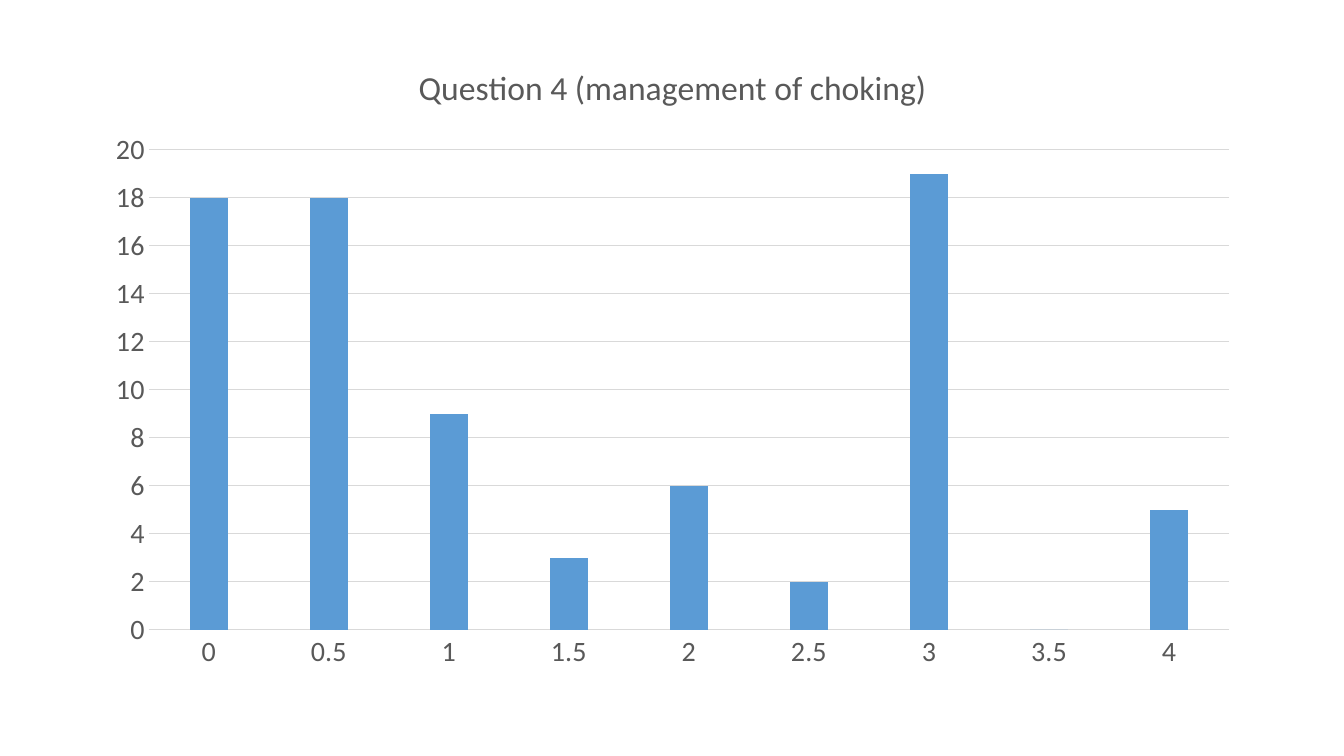
from pptx import Presentation
from pptx.chart.data import CategoryChartData
from pptx.dml.color import RGBColor
from pptx.enum.chart import XL_CHART_TYPE, XL_TICK_MARK
from pptx.util import Inches, Pt

# Content
TITLE = "Question 4 (management of choking)"
SCORES = {
    "0": 18, "0.5": 18, "1": 9, "1.5": 3, "2": 6,
    "2.5": 2, "3": 19, "3.5": 0, "4": 5,
}
COLORS = {"bar": "5B9BD5", "text": "595959", "line": "D9D9D9"}
FONT = "Calibri"
BOX = (0.92, 0.4, 11.5, 6.36)


def color(name):
    return RGBColor.from_string(COLORS[name])


def set_font(font, size):
    font.name = FONT
    font.size = Pt(size)
    font.bold = False
    font.color.rgb = color("text")


def set_line(line):
    line.color.rgb = color("line")
    line.width = Pt(0.75)


def main():
    prs = Presentation()
    prs.slide_width, prs.slide_height = Inches(13.33), Inches(7.5)
    slide = prs.slides.add_slide(prs.slide_layouts[6])

    # Chart data
    data = CategoryChartData()
    data.categories = list(SCORES)
    data.add_series(TITLE, list(SCORES.values()))
    frame = slide.shapes.add_chart(
        XL_CHART_TYPE.COLUMN_CLUSTERED, *map(Inches, BOX), data)
    chart = frame.chart
    chart.has_legend = False
    set_font(chart.font, 20)

    # Chart title
    chart.has_title = True
    run = chart.chart_title.text_frame.paragraphs[0].add_run()
    run.text = TITLE
    set_font(run.font, 24)
    chart.chart_title.include_in_layout = False

    # Bars
    plot = chart.plots[0]
    plot.vary_by_categories = False
    plot.gap_width, plot.overlap = 219, -27
    fill = plot.series[0].format.fill
    fill.solid()
    fill.fore_color.rgb = color("bar")

    # Axes
    for axis in (chart.category_axis, chart.value_axis):
        axis.major_tick_mark = axis.minor_tick_mark = XL_TICK_MARK.NONE
        set_font(axis.tick_labels.font, 20)
    set_line(chart.category_axis.format.line)
    counts = chart.value_axis
    counts.minimum_scale, counts.maximum_scale = 0, 20
    counts.major_unit = 2
    counts.format.line.fill.background()
    counts.has_major_gridlines = True
    set_line(counts.major_gridlines.format.line)

    prs.save("out.pptx")


if __name__ == "__main__":
    main()
